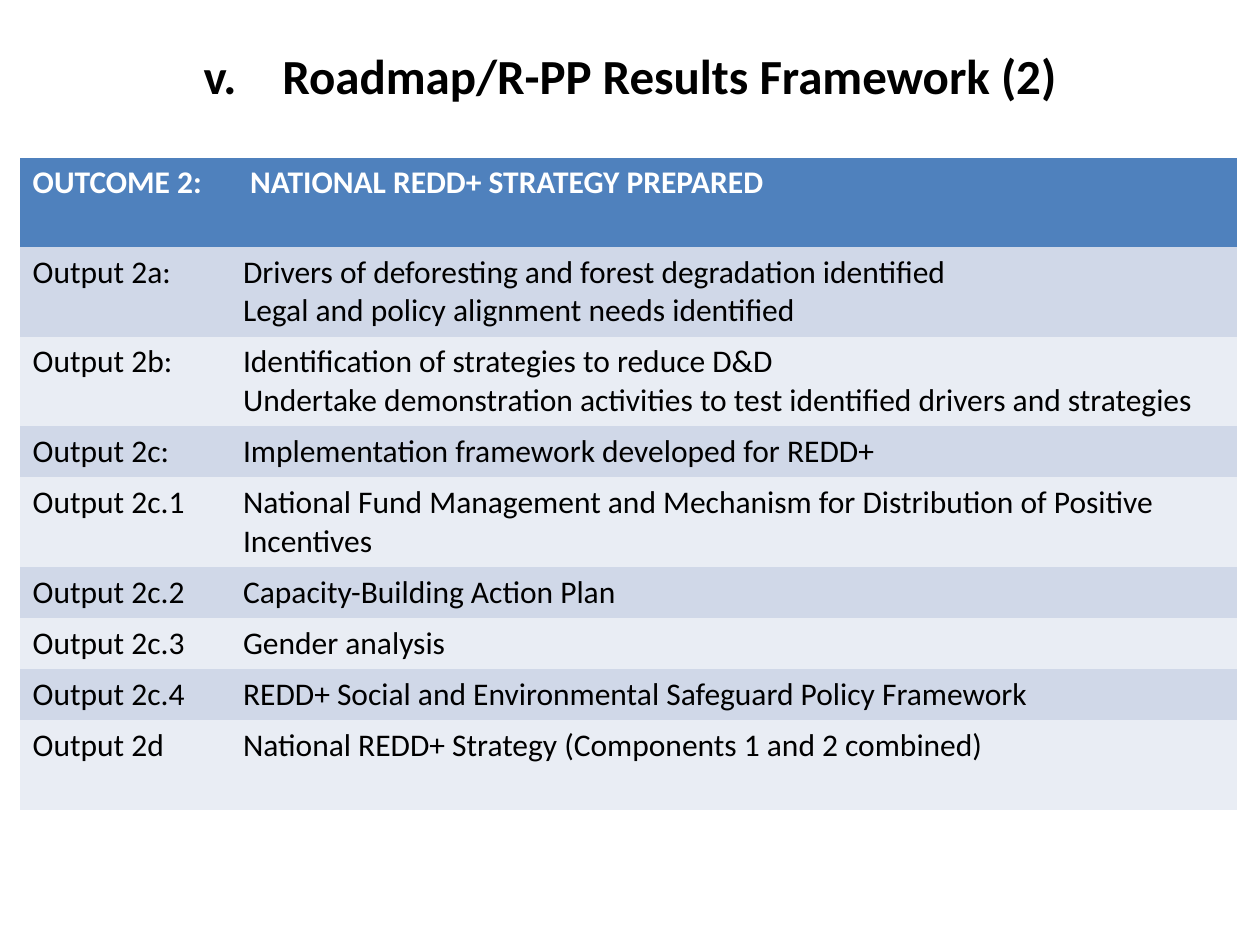
from lxml import etree
from pptx import Presentation
from pptx.dml.color import RGBColor
from pptx.enum.text import MSO_ANCHOR, PP_ALIGN
from pptx.oxml.ns import qn
from pptx.util import Pt

MIDDLE = MSO_ANCHOR.MIDDLE
CENTER = PP_ALIGN.CENTER
PLAIN = "{2D5ABB26-0587-4C30-8999-92F81FD0307C}"
HEAD, DARK, LIGHT = "4F81BD", "D0D8E8", "E9EDF4"
TALL, SHORT = 51.2, 29.2


def color(code):
    return RGBColor.from_string(code)


def style(para, size, code, bold):
    font = para.font
    font.name = "Calibri"
    font.size = Pt(size)
    font.bold = bold
    font.color.rgb = color(code)


rows = [
    ("OUTCOME 2:", "NATIONAL REDD+ STRATEGY PREPARED", TALL),
    ("Output 2a:", "Drivers of deforesting and forest degradation identified\n"
     "Legal and policy alignment needs identified", TALL),
    ("Output 2b:", "Identification of strategies to reduce D&D\n"
     "Undertake demonstration activities to test identified drivers and strategies", TALL),
    ("Output 2c:", "Implementation framework developed for REDD+", SHORT),
    ("Output 2c.1", "National Fund Management and Mechanism for Distribution of "
     "Positive Incentives", TALL),
    ("Output 2c.2", "Capacity-Building Action Plan", SHORT),
    ("Output 2c.3", "Gender analysis", SHORT),
    ("Output 2c.4", "REDD+ Social and Environmental Safeguard Policy Framework", SHORT),
    ("Output 2d", "National REDD+ Strategy (Components 1 and 2 combined)", TALL),
]

deck = Presentation()
deck.slide_width, deck.slide_height = Pt(720), Pt(540)
slide = deck.slides.add_slide(deck.slide_layouts[6])

title = slide.shapes.add_textbox(0, 0, Pt(720), Pt(90))
frame = title.text_frame
frame.word_wrap = True
frame.vertical_anchor = MIDDLE
para = frame.paragraphs[0]
para.text = "Roadmap/R-PP Results Framework (2)"
para.alignment = CENTER
para.line_spacing = 0.9
para.space_before = Pt(5.6)
para.space_after = Pt(12)
style(para, 28, "000000", True)
run = para.runs[0].font
run.size, run.bold = Pt(28), True
props = para._p.get_or_add_pPr()
props.set("marL", str(Pt(45)))
props.set("indent", str(Pt(-45)))
mark = etree.Element(qn("a:buAutoNum"), type="romanLcPeriod", startAt="5")
props.find(qn("a:defRPr")).addprevious(mark)

total = sum(row[2] for row in rows)
table = slide.shapes.add_table(
    len(rows), 2, Pt(11.5), Pt(90), Pt(695.5), Pt(total)).table
table._tbl.tblPr.find(qn("a:tableStyleId")).text = PLAIN
table.columns[0].width = Pt(120.2)
table.columns[1].width = Pt(575.3)

for i, (label, text, height) in enumerate(rows):
    table.rows[i].height = Pt(height)
    shade = HEAD if i == 0 else DARK if i % 2 else LIGHT
    ink = "FFFFFF" if i == 0 else "000000"
    for j, words in enumerate((label, text)):
        cell = table.cell(i, j)
        cell.text = words
        cell.fill.solid()
        cell.fill.fore_color.rgb = color(shade)
        for para in cell.text_frame.paragraphs:
            style(para, 18, ink, i == 0)
table.cell(0, 1).margin_left = Pt(11.3)

deck.save("out.pptx")
